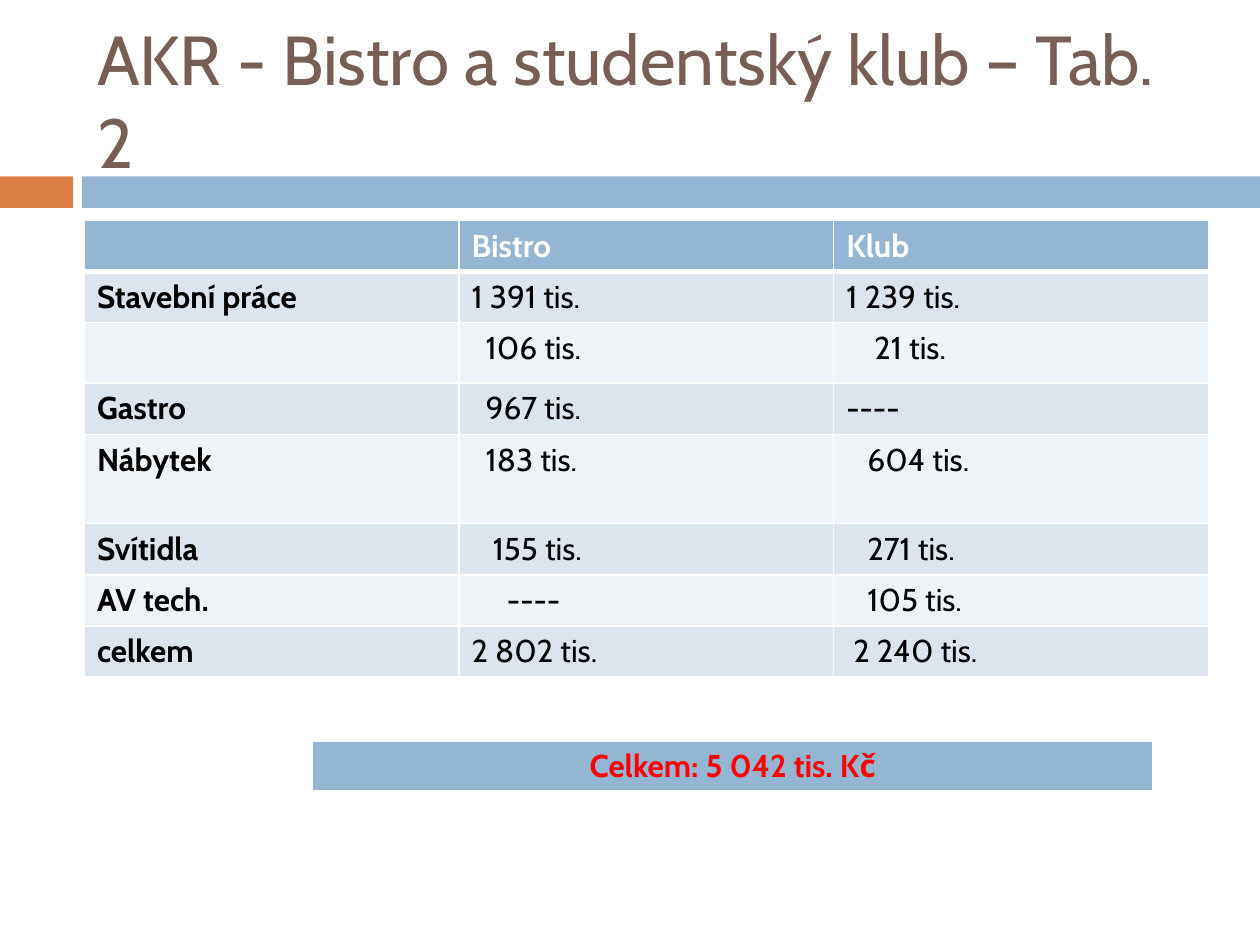
from pptx import Presentation
from pptx.dml.color import RGBColor
from pptx.enum.shapes import MSO_SHAPE
from pptx.enum.text import MSO_ANCHOR, MSO_AUTO_SIZE, PP_ALIGN
from pptx.oxml import parse_xml
from pptx.oxml.ns import nsdecls
from pptx.util import Inches, Pt

BLUE, ORANGE, BROWN = "94B6D2", "DD8047", "775F55"
BANDS = ("DCE5EE", "EEF3F7")
WHITE, BLACK, RED = "FFFFFF", "000000", "FF0000"
SPACE = 0.056  # width in inches of one indent step
ROW = 0.405

# Each amount is its text and its indent in steps.
HEADER = ("", "Bistro", "Klub")
COSTS = [
    ("Stavební práce", ("1 391 tis.", 0), ("1 239 tis.", 0), ROW),
    ("", ("106 tis.", 2), ("21 tis.", 4), 0.48),
    ("Gastro", ("967 tis.", 2), ("----", 0), ROW),
    ("Nábytek", ("183 tis.", 2), ("604 tis.", 3), 0.71),
    ("Svítidla", ("155 tis.", 3), ("271 tis.", 3), ROW),
    ("AV tech.", ("----", 5), ("105 tis.", 3), ROW),
    ("celkem", ("2 802 tis.", 0), ("2 240 tis.", 1), ROW),
]


def color(value):
    return RGBColor.from_string(value)


def set_borders(cell, bottom=1):
    properties = cell._tc.get_or_add_tcPr()
    for index, (side, width) in enumerate(
            (("L", 1), ("R", 1), ("T", 1), ("B", bottom))):
        properties.insert(index, parse_xml(
            f'<a:ln{side} {nsdecls("a")} w="{Pt(width)}"><a:solidFill>'
            f'<a:srgbClr val="{WHITE}"/></a:solidFill></a:ln{side}>'))


class SlideBuilder:
    def __init__(self, slide, font_name="Cabin"):
        self.slide = slide
        self.font_name = font_name

    def style(self, paragraph, size, font_color, bold=False):
        font = paragraph.font
        font.name, font.size, font.bold = self.font_name, Pt(size), bold
        font.color.rgb = color(font_color)

    def title(self, text, left, top, width, height):
        title = self.slide.shapes.title
        title.left, title.top = Inches(left), Inches(top)
        title.width, title.height = Inches(width), Inches(height)
        frame = title.text_frame
        frame.text = text
        frame.word_wrap = True
        frame.auto_size = MSO_AUTO_SIZE.NONE
        frame.vertical_anchor = MSO_ANCHOR.MIDDLE
        paragraph = frame.paragraphs[0]
        paragraph.alignment = PP_ALIGN.LEFT
        self.style(paragraph, 39.6, BROWN)

    def bar(self, left, width, fill):
        shape = self.slide.shapes.add_shape(
            MSO_SHAPE.RECTANGLE, Inches(left), Inches(1.4), Inches(width), Inches(0.25))
        shape.shadow.inherit = False
        shape.fill.solid()
        shape.fill.fore_color.rgb = color(fill)
        shape.line.fill.background()

    def table(self, left, top, width, heights, columns):
        table = self.slide.shapes.add_table(
            len(heights), columns, Inches(left), Inches(top),
            Inches(width), Inches(sum(heights))).table
        table.first_row = table.horz_banding = False
        for row, height in zip(table.rows, heights):
            row.height = Inches(height)
        return table

    def cell(self, cell, text, fill, font_color=BLACK, bold=False,
             indent=0, bottom=1, alignment=PP_ALIGN.LEFT):
        cell.fill.solid()
        cell.fill.fore_color.rgb = color(fill)
        set_borders(cell, bottom)
        cell.margin_left = Inches(0.1 + indent * SPACE)
        cell.text = text
        paragraph = cell.text_frame.paragraphs[0]
        paragraph.alignment = alignment
        self.style(paragraph, 18, font_color, bold)


def main():
    presentation = Presentation()
    presentation.slide_width, presentation.slide_height = Inches(10), Inches(7.5)
    builder = SlideBuilder(
        presentation.slides.add_slide(presentation.slide_layouts[5]))

    builder.bar(0, 0.58, ORANGE)
    builder.bar(0.65, 9.35, BLUE)
    builder.title("AKR - Bistro a studentský klub – Tab. 2", 0.67, 0.25, 8.92, 1.08)

    heights = [ROW] + [height for *_, height in COSTS]
    costs = builder.table(0.67, 1.75, 8.92, heights, len(HEADER))
    for column, text in enumerate(HEADER):
        builder.cell(costs.cell(0, column), text, BLUE, WHITE, bold=True, bottom=3)
    for row, (label, *amounts, _) in enumerate(COSTS, start=1):
        band = BANDS[(row - 1) % 2]
        builder.cell(costs.cell(row, 0), label, band, bold=True)
        for column, (text, indent) in enumerate(amounts, start=1):
            builder.cell(costs.cell(row, column), text, band, indent=indent)

    total = builder.table(2.48, 5.88, 6.67, [ROW], 1)
    builder.cell(total.cell(0, 0), "Celkem: 5 042 tis. Kč", BLUE, RED, bold=True,
                 bottom=3, alignment=PP_ALIGN.CENTER)

    presentation.save("out.pptx")


if __name__ == "__main__":
    main()
